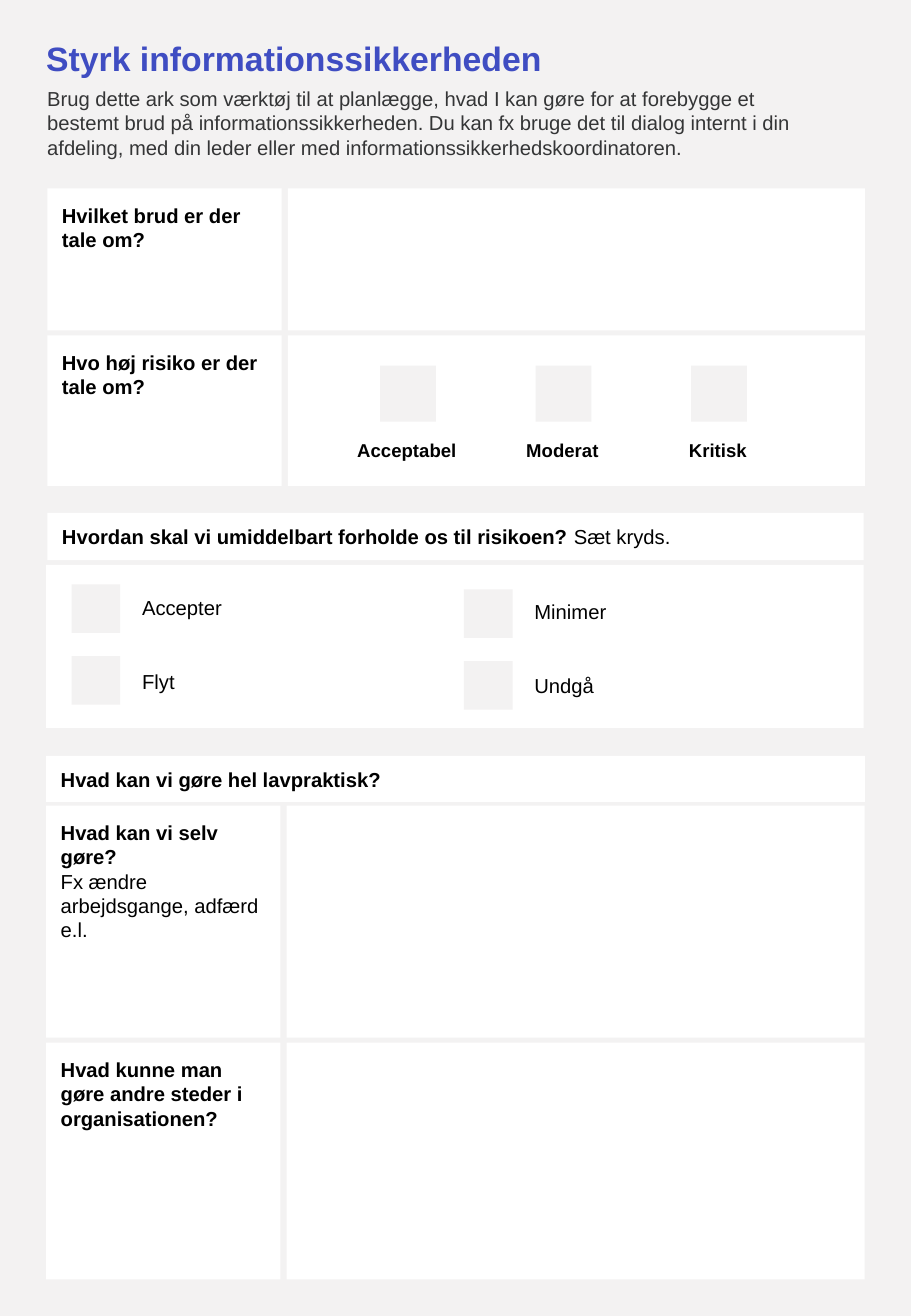
from pptx import Presentation
from pptx.dml.color import RGBColor
from pptx.enum.shapes import MSO_SHAPE
from pptx.enum.text import MSO_ANCHOR, PP_ALIGN
from pptx.util import Inches, Pt

COLORS = {"page": "F3F2F2", "card": "FFFFFF", "title": "3F4DC2", "intro": "343536", "ink": "000000"}
TITLE = "Styrk informationssikkerheden"
INTRO = (
    "Brug dette ark som værktøj til at planlægge, hvad I kan gøre for at forebygge et bestemt brud på "
    "informationssikkerheden. Du kan fx bruge det til dialog internt i din afdeling, med din leder eller "
    "med informationssikkerhedskoordinatoren."
)
HEADINGS = [
    (0.39, 4.22, 6.72, 0.39, [[("Hvordan skal vi umiddelbart forholde os til risikoen? ", True), ("Sæt kryds.", False)]]),
    (0.38, 6.22, 6.74, 0.38, [[("Hvad kan vi gøre hel lavpraktisk?", True)]]),
]
QUESTIONS = [
    (0.39, 2.37, 1.55, 1.17, [[("Hvilket brud er der tale om?", True)]]),
    (0.39, 2.37, 2.76, 1.24, [[("Hvo høj risiko er der tale om?", True)]]),
    (0.38, 2.36, 6.63, 1.91, [[("Hvad kan vi selv gøre?", True)], [("Fx ændre arbejdsgange, adfærd e.l.", False)]]),
    (0.38, 2.36, 8.58, 1.95, [[("Hvad kunne man gøre andre steder i organisationen?", True)]]),
]
RISKS = ["Acceptabel", "Moderat", "Kritisk"]
RESPONSES = [["Accepter", "Minimer"], ["Flyt", "Undgå"]]

QUESTION_WIDTH, RIGHT_EDGE = 1.93, 7.12
RISK_LEFT, RISK_TOP, RISK_STEP, RISK_SIZE = 3.13, 3.01, 1.28, 0.46
RISK_LABEL_WIDTH = 0.91
RESPONSE_LEFT, RESPONSE_TOP, RESPONSE_SIZE = 0.59, 4.81, 0.4
COLUMN_STEP, ROW_STEP = 3.23, 0.59

NO_INSETS = (0, 0, 0, 0)
CARD_INSETS = (0.12, 0.12, 0.12, 0.2)
HEADING_INSETS = (0.12, 0.12, 0.12, 0.12)
INTRO_INSETS = (0.1, 0.05, 0.1, 0.05)

prs = Presentation()
prs.slide_width, prs.slide_height = Inches(7.5), Inches(10.83)
slide = prs.slides.add_slide(prs.slide_layouts[6])
slide.background.fill.solid()
slide.background.fill.fore_color.rgb = RGBColor.from_string(COLORS["page"])


def write(frame, paragraphs, insets, size=12, color="ink", align=PP_ALIGN.LEFT, anchor=MSO_ANCHOR.TOP, spacing=1.0):
    sides = ("margin_left", "margin_top", "margin_right", "margin_bottom")
    frame_format = {"word_wrap": True, "vertical_anchor": anchor, **dict(zip(sides, map(Inches, insets)))}
    for key, value in frame_format.items():
        setattr(frame, key, value)
    for index, pieces in enumerate(paragraphs):
        paragraph = frame.paragraphs[0] if index == 0 else frame.add_paragraph()
        paragraph.alignment, paragraph.line_spacing = align, spacing
        for words, bold in pieces:
            run = paragraph.add_run()
            run.text = words
            for key, value in {"name": "Arial", "size": Pt(size), "bold": bold}.items():
                setattr(run.font, key, value)
            run.font.color.rgb = RGBColor.from_string(COLORS[color])


def add_card(left, top, width, height, color="card"):
    card = slide.shapes.add_shape(MSO_SHAPE.RECTANGLE, *map(Inches, (left, top, width, height)))
    card.shadow.inherit = False
    card.fill.solid()
    card.fill.fore_color.rgb = RGBColor.from_string(COLORS[color])
    card.line.fill.background()
    return card.text_frame


def add_label(left, top, width, height):
    return slide.shapes.add_textbox(*map(Inches, (left, top, width, height))).text_frame


write(add_label(0.38, 0.35, 6.67, 0.35), [[(TITLE, True)]], NO_INSETS, size=20, color="title", spacing=0.9)
write(add_label(0.29, 0.66, 6.47, 0.71), [[(INTRO, False)]], INTRO_INSETS, color="intro")

for left, top, width, height, heading in HEADINGS:
    write(add_card(left, top, width, height), heading, HEADING_INSETS, anchor=MSO_ANCHOR.MIDDLE)

for left, answer_left, top, height, question in QUESTIONS:
    write(add_card(left, top, QUESTION_WIDTH, height), question, CARD_INSETS)
    add_card(answer_left, top, RIGHT_EDGE - answer_left, height)

for column, risk in enumerate(RISKS):
    left = RISK_LEFT + column * RISK_STEP
    add_card(left, RISK_TOP, RISK_SIZE, RISK_SIZE, "page")
    label_left = left + (RISK_SIZE - RISK_LABEL_WIDTH) / 2 - 0.01
    write(add_label(label_left, 3.61, RISK_LABEL_WIDTH, 0.19), [[(risk, True)]], NO_INSETS, size=11, align=PP_ALIGN.CENTER)

add_card(0.38, 4.65, 6.73, 1.34)
for row, responses in enumerate(RESPONSES):
    for column, response in enumerate(responses):
        left = RESPONSE_LEFT + column * COLUMN_STEP
        top = RESPONSE_TOP + row * ROW_STEP + column * 0.04
        label_top = 4.78 + row * 0.61 + column * 0.03
        write(add_card(left + 0.46, label_top, QUESTION_WIDTH, 0.53), [[(response, False)]], CARD_INSETS)
        add_card(left, top, RESPONSE_SIZE, RESPONSE_SIZE, "page")

prs.save("out.pptx")
